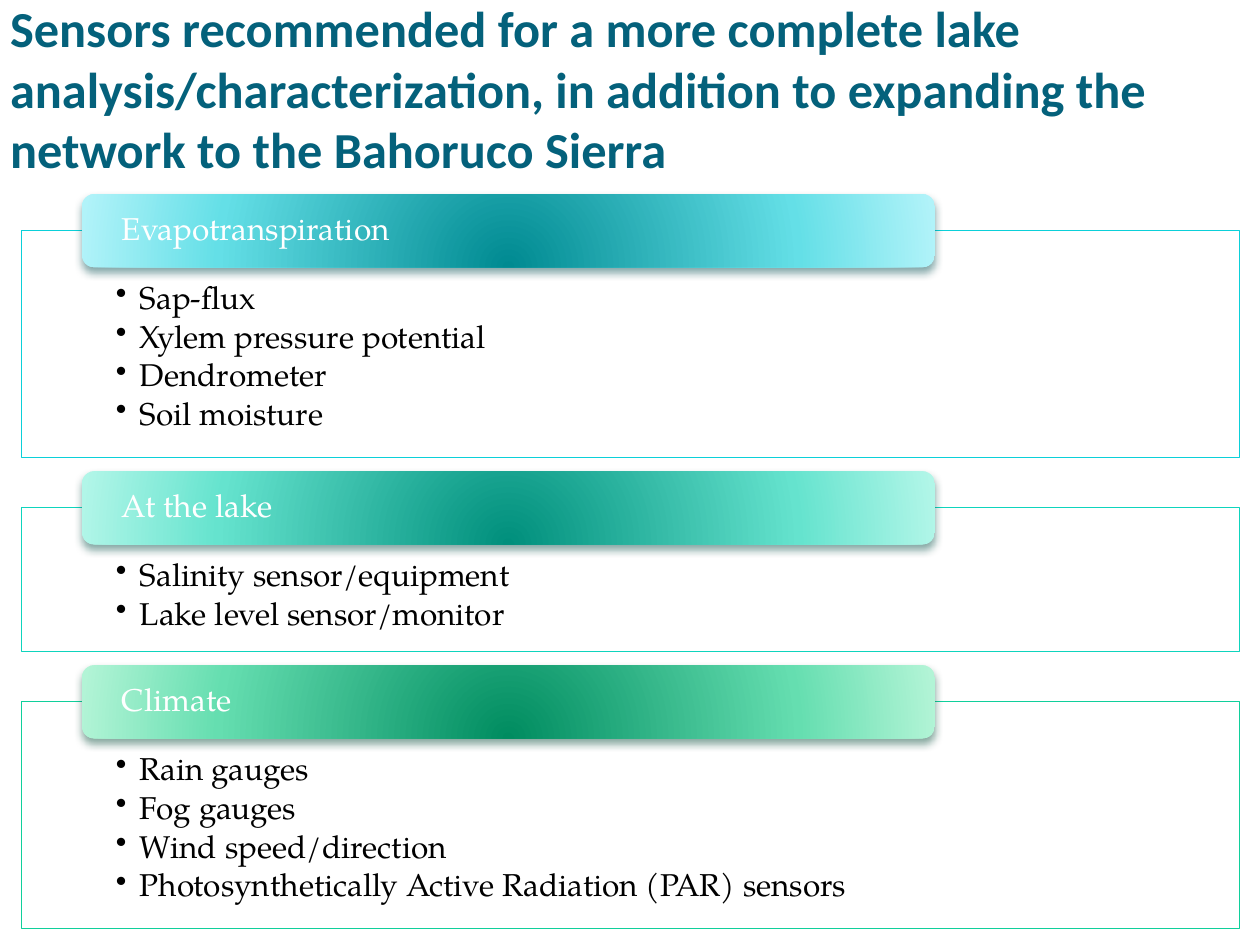
"""Build a slide listing recommended lake sensors in three titled panels."""
from lxml import etree
from pptx import Presentation
from pptx.dml.color import RGBColor
from pptx.enum.shapes import MSO_SHAPE
from pptx.enum.text import MSO_ANCHOR, PP_ALIGN
from pptx.oxml.ns import qn
from pptx.util import Inches, Pt

RECT, ROUNDED = MSO_SHAPE.RECTANGLE, MSO_SHAPE.ROUNDED_RECTANGLE
TOP, MIDDLE, BOTTOM = MSO_ANCHOR.TOP, MSO_ANCHOR.MIDDLE, MSO_ANCHOR.BOTTOM
LEFT = PP_ALIGN.LEFT

THEME = {
    "title": {"name": "Calibri", "size": Pt(28.8), "bold": True, "color": "04617B"},
    "heading": {"name": "TeX Gyre Pagella", "size": Pt(18), "color": "FFFFFF"},
    "item": {"name": "TeX Gyre Pagella", "size": Pt(18), "color": "000000"},
    "panel": "FFFFFF",
}
SECTIONS = [
    ("Evapotranspiration",
     ["Sap-flux", "Xylem pressure potential", "Dendrometer", "Soil moisture"],
     {"line": "0BD0D9", "glow": ("008A91", "64DFE7", "B1F3F9"), "shadow": "024B4E"}),
    ("At the lake",
     ["Salinity sensor/equipment", "Lake level sensor/monitor"],
     {"line": "0ED4BD", "glow": ("008F7C", "65E3CE", "B1F6E8"), "shadow": "034C44"}),
    ("Climate",
     ["Rain gauges", "Fog gauges", "Wind speed/direction",
      "Photosynthetically Active Radiation (PAR) sensors"],
     {"line": "10CF9B", "glow": ("008C60", "65DEB0", "B2F4D6"), "shadow": "044A37"}),
]

deck = Presentation()
deck.slide_width, deck.slide_height = Inches(10), Inches(7.5)
slide = deck.slides.add_slide(deck.slide_layouts[6])
CELL = deck.slide_width // 100


def add(parent, tag, **values):
    return etree.SubElement(parent, qn(tag), {key: str(value) for key, value in values.items()})


def write(holder, lines, style, anchor, insets, spacing, bullet=False):
    frame = holder.text_frame
    frame.word_wrap, frame.vertical_anchor = True, anchor
    for side, inset in zip(("left", "top", "right", "bottom"), insets):
        setattr(frame, f"margin_{side}", int(inset * CELL))
    for index, line in enumerate(lines):
        paragraph = frame.add_paragraph() if index else frame.paragraphs[0]
        for name, value in {"alignment": LEFT, **spacing}.items():
            setattr(paragraph, name, value)
        if bullet:
            properties = paragraph._p.get_or_add_pPr()
            indent = int(1.9 * CELL)
            properties.set("marL", str(indent))
            properties.set("indent", str(-indent))
            add(properties, "a:buChar", char="•")
        run = paragraph.add_run()
        run.text = line
        for name, value in THEME[style].items():
            if name == "color":
                run.font.color.rgb = RGBColor.from_string(value)
            else:
                setattr(run.font, name, value)


title = slide.shapes.add_textbox(*(int(n * CELL) for n in (0.8, 0, 99.2, 14.2)))
write(title, ["Sensors recommended for a more complete lake analysis/characterization, "
              "in addition to expanding the network to the Bahoruco Sierra"],
      "title", BOTTOM, (0, 0.5, 0, 0), {})

panel_top, panel_gap, bar_rise = 18.3, 4, 2.9
for heading, sensors, colors in SECTIONS:
    panel_height = 4.8 + 3.3 * len(sensors)
    panel = slide.shapes.add_shape(
        RECT, *(int(n * CELL) for n in (1.7, panel_top, 96.7, panel_height)))
    panel.shadow.inherit = False
    panel.fill.solid()
    panel.fill.fore_color.rgb = RGBColor.from_string(THEME["panel"])
    add(panel._element.spPr.find(qn("a:solidFill"))[0], "a:alpha", val=90000)
    panel.line.color.rgb = RGBColor.from_string(colors["line"])
    panel.line.width = Pt(0.75)
    write(panel, sensors, "item", TOP, (7.5, 4.1, 7.5, 1.4),
          {"level": 1, "line_spacing": 0.9, "space_after": Pt(2.7)}, bullet=True)

    bar = slide.shapes.add_shape(
        ROUNDED, *(int(n * CELL) for n in (6.5, panel_top - bar_rise, 67.7, 2 * bar_rise)))
    bar.shadow.inherit = False
    bar.line.fill.background()
    bar.fill.background()
    outline = bar._element.spPr
    gradient = etree.Element(qn("a:gradFill"), rotWithShape="1")
    stops = add(gradient, "a:gsLst")
    for share, color in zip((0, 68, 100), colors["glow"]):
        add(add(stops, "a:gs", pos=share * 1000), "a:srgbClr", val=color)
    add(add(gradient, "a:path", path="circle"), "a:fillToRect",
        l=50000, t=130000, r=50000, b=-30000)
    outline.replace(outline.find(qn("a:noFill")), gradient)
    shadow = add(outline.find(qn("a:effectLst")), "a:outerShdw", blurRad=Pt(4.5),
                 dist=Pt(3), dir=5400000, rotWithShape=0)
    add(add(shadow, "a:srgbClr", val=colors["shadow"]), "a:alpha", val=48000)
    write(bar, [heading], "heading", MIDDLE, (2.9, 0, 2.9, 0), {"line_spacing": 0.9})
    panel_top += panel_height + panel_gap

deck.save("out.pptx")
